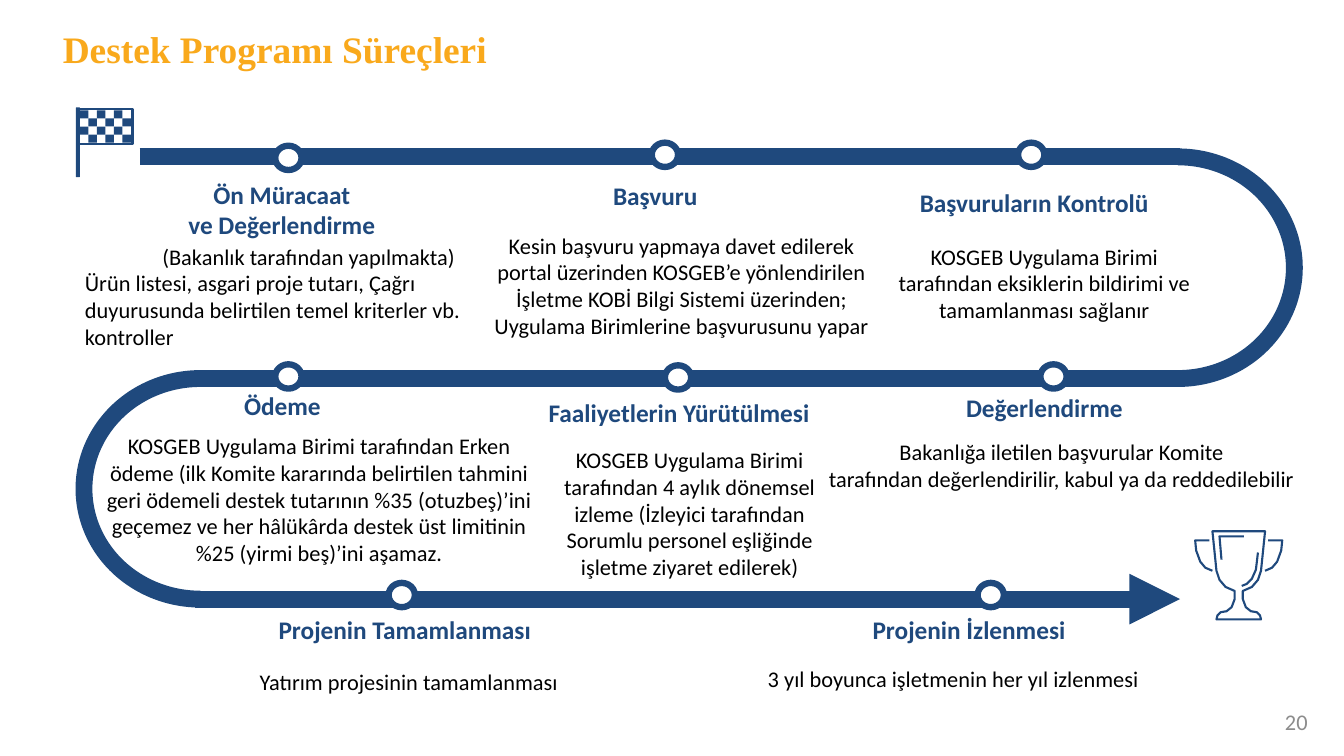
from dataclasses import dataclass
from itertools import product

from lxml import etree
from pptx import Presentation
from pptx.dml.color import RGBColor
from pptx.enum.shapes import MSO_CONNECTOR, MSO_SHAPE
from pptx.enum.text import MSO_ANCHOR, MSO_AUTO_SIZE, PP_ALIGN
from pptx.oxml.ns import qn
from pptx.shapes.autoshape import Shape
from pptx.slide import Slide
from pptx.text.text import _Paragraph as Paragraph
from pptx.util import Inches, Pt

STRAIGHT = MSO_CONNECTOR.STRAIGHT
ARC, OVAL = MSO_SHAPE.ARC, MSO_SHAPE.OVAL
RECTANGLE, ROUNDED = MSO_SHAPE.RECTANGLE, MSO_SHAPE.ROUNDED_RECTANGLE
LEFT, CENTER, RIGHT = PP_ALIGN.LEFT, PP_ALIGN.CENTER, PP_ALIGN.RIGHT
TOP, MIDDLE = MSO_ANCHOR.TOP, MSO_ANCHOR.MIDDLE
NO_AUTO_SIZE = MSO_AUTO_SIZE.NONE

COLORS = {"navy": "1F497D", "orange": "F9A91C", "black": "000000", "white": "FFFFFF", "gray": "8C8C8C"}
FORMATS = {
    "title": {"name": "Times New Roman", "size": Pt(26.6), "bold": True},
    "heading": {"name": "Calibri", "size": Pt(18), "bold": True},
    "body": {"name": "Calibri", "size": Pt(15.9), "bold": False},
}

SLIDE_WIDTH, SLIDE_HEIGHT = Inches(13.28), Inches(7.47)
COLUMN = SLIDE_WIDTH / 132.8
ROW = SLIDE_HEIGHT / 74.7

ROAD_ROWS = (15.5, 37.4, 59.2)
ROAD_STARTS = (13.8, 19.4, 19.3)
ROAD_END = 116.6
ROAD_WIDTH, DOT_LINE, ICON_LINE = 12, 4.5, 1.5
DOT_WIDTH, DOT_HEIGHT = 2.6, 2.4
CHECK_WIDTH, CHECK_HEIGHT = 0.84, 0.8
TROPHY_CENTER = 122.4

Points = list[tuple[float, float]]


@dataclass(frozen=True)
class Box:
    left: float
    top: float
    width: float
    height: float

    def emu(self) -> tuple[int, int, int, int]:
        return (round(self.left * COLUMN), round(self.top * ROW),
                round(self.width * COLUMN), round(self.height * ROW))


@dataclass(frozen=True)
class Stage:
    dot: tuple[float, float]
    heading: str
    heading_box: Box
    body: tuple[str, ...]
    body_box: Box
    last_alignment: PP_ALIGN = CENTER


@dataclass(frozen=True)
class Bend:
    box: Box
    start: float
    end: float


STAGES = (
    Stage((27.2, 14.4), "Ön Müracaat\nve Değerlendirme", Box(17.5, 17.2, 20.7, 7.1),
          ("(Bakanlık tarafından yapılmakta)",
           "Ürün listesi, asgari proje tutarı, Çağrı duyurusunda belirtilen temel kriterler vb. kontroller"),
          Box(7.4, 23.5, 46.2, 11.7), LEFT),
    Stage((64.4, 14.1), "Başvuru", Box(59.5, 17.3, 10.5, 4.1),
          ("Kesin başvuru yapmaya davet edilerek portal üzerinden KOSGEB’e yönlendirilen",
           "İşletme KOBİ Bilgi Sistemi üzerinden; Uygulama Birimlerine başvurusunu yapar"),
          Box(47.4, 22.4, 39.9, 11.7)),
    Stage((100.6, 14.1), "Başvuruların Kontrolü", Box(89.5, 18, 25.4, 4),
          ("KOSGEB Uygulama Birimi tarafından eksiklerin bildirimi ve tamamlanması sağlanır",),
          Box(86.2, 23.5, 34, 9.1)),
    Stage((102.8, 36), "Değerlendirme", Box(94.3, 38.3, 17.8, 4.1),
          ("Bakanlığa iletilen başvurular Komite",
           "tarafından değerlendirilir, kabul ya da reddedilebilir"),
          Box(80.9, 42.8, 48, 9.1)),
    Stage((65.7, 36.1), "Faaliyetlerin Yürütülmesi", Box(52.9, 38.8, 28.4, 4.1),
          ("KOSGEB Uygulama Birimi tarafından 4 aylık dönemsel izleme (İzleyici tarafından "
           "Sorumlu personel eşliğinde işletme ziyaret edilerek)",),
          Box(51.9, 43.6, 32.5, 14.4)),
    Stage((27.2, 36), "Ödeme", Box(22.8, 38.1, 10.2, 4.1),
          ("KOSGEB Uygulama Birimi tarafından Erken ödeme (ilk Komite kararında belirtilen tahmini",
           "geri ödemeli destek tutarının %35 (otuzbeş)’ini geçemez ve her hâlükârda destek üst limitinin",
           "%25 (yirmi beş)’ini aşamaz."),
          Box(9.3, 42.2, 44.5, 14.4)),
    Stage((38.4, 57.6), "Projenin Tamamlanması", Box(26.2, 60.2, 27.6, 4.1),
          ("Yatırım projesinin tamamlanması",), Box(20.4, 65.5, 40, 3.7)),
    Stage((96.6, 57.6), "Projenin İzlenmesi", Box(84, 60.2, 23.5, 4.1),
          ("3 yıl boyunca işletmenin her yıl izlenmesi",), Box(73.8, 65.2, 40.8, 3.7)),
)

BENDS = (
    Bend(Box(104.9, ROAD_ROWS[0], 23, ROAD_ROWS[1] - ROAD_ROWS[0]), 162, 54),
    Bend(Box(8.3, ROAD_ROWS[1], 23, ROAD_ROWS[2] - ROAD_ROWS[1]), 54, 162),
)

CUP_HALF: Points = [
    (0, 52.5), (2.6, 52.5), (2.2, 56.4), (1.9, 57.3), (1.3, 58), (0.4, 58.4), (0.4, 59.2),
    (0.7, 60), (1.2, 60.4), (1.8, 60.5), (2.1, 60.8), (2.2, 61.2), (0, 61.2),
]
HANDLE: Points = [(2.9, 53.4), (4.3, 53.4), (4.2, 54.4), (3.8, 55.5), (3.3, 56.1), (2.6, 56.4)]
RIM_GLINT: Points = [(0.5, 53), (-1.9, 53), (-1.7, 55.3)]
BOWL_GLINT: Points = [(1.9, 54.6), (1.7, 56.3), (1.3, 57.2), (0.8, 57.7), (0.3, 57.9)]


def color(name: str) -> RGBColor:
    return RGBColor.from_string(COLORS[name])


def write(paragraph: Paragraph, text: str, style: str, color_name: str, alignment: PP_ALIGN) -> None:
    paragraph.text = text
    paragraph.alignment = alignment
    for run in paragraph.runs:
        for attribute, value in FORMATS[style].items():
            setattr(run.font, attribute, value)
        run.font.color.rgb = color(color_name)


def add_text(slide: Slide, box: Box, lines: tuple[str, ...], style: str, color_name: str,
             wrap: bool = True, alignment: PP_ALIGN = CENTER, last_alignment: PP_ALIGN = CENTER) -> Shape:
    shape = slide.shapes.add_textbox(*box.emu())
    frame = shape.text_frame
    frame.word_wrap = wrap
    for index, line in enumerate(lines):
        paragraph = frame.add_paragraph() if index else frame.paragraphs[0]
        write(paragraph, line, style, color_name, last_alignment if index == len(lines) - 1 > 0 else alignment)
    return shape


def format_shape(shape: Shape, fill: str | None, line_width: float = 0) -> None:
    shape.shadow.inherit = False
    if fill:
        shape.fill.solid()
        shape.fill.fore_color.rgb = color(fill)
    else:
        shape.fill.background()
    if line_width:
        shape.line.color.rgb = color("navy")
        shape.line.width = Pt(line_width)
    else:
        shape.line.fill.background()


def add_shape(slide: Slide, kind: MSO_SHAPE, box: Box, fill: str | None, line_width: float = 0) -> Shape:
    shape = slide.shapes.add_shape(kind, *box.emu())
    format_shape(shape, fill, line_width)
    return shape


def add_road(slide: Slide, start: float, row: float, arrow: bool) -> None:
    y = round(row * ROW)
    connector = slide.shapes.add_connector(STRAIGHT, round(start * COLUMN), y, round(ROAD_END * COLUMN), y)
    connector.line.color.rgb = color("navy")
    connector.line.width = Pt(ROAD_WIDTH)
    properties = connector.element.spPr
    if arrow:
        etree.SubElement(properties.find(qn("a:ln")), qn("a:tailEnd"), type="triangle")
    etree.SubElement(properties, qn("a:effectLst"))


def add_bend(slide: Slide, bend: Bend) -> None:
    shape = add_shape(slide, ARC, bend.box, None, ROAD_WIDTH)
    shape.adjustments[0] = bend.start
    shape.adjustments[1] = bend.end


def mirrored(points: Points) -> Points:
    return [(-x, y) for x, y in points]


def add_stroke(slide: Slide, points: Points, close: bool = False) -> None:
    corners = [(round((TROPHY_CENTER + x) * COLUMN), round(y * ROW)) for x, y in points]
    builder = slide.shapes.build_freeform(*corners[0])
    builder.add_line_segments(corners[1:], close=close)
    format_shape(builder.convert_to_shape(), None, ICON_LINE)


def add_flag(slide: Slide) -> None:
    add_shape(slide, ROUNDED, Box(7.5, 10.6, 0.4, 6.9), "navy")
    add_shape(slide, RECTANGLE, Box(7.7, 10.8, 5.4, 3.4), None, ICON_LINE)
    for column, row in product(range(6), range(4)):
        if column % 2 == row % 2:
            add_shape(slide, RECTANGLE, Box(7.9 + column * CHECK_WIDTH, 10.9 + row * CHECK_HEIGHT,
                                            CHECK_WIDTH, CHECK_HEIGHT), "navy")


def add_trophy(slide: Slide) -> None:
    add_stroke(slide, CUP_HALF + mirrored(CUP_HALF[1:-1])[::-1], close=True)
    for points in (HANDLE, mirrored(HANDLE), RIM_GLINT, BOWL_GLINT):
        add_stroke(slide, points)


def add_title(slide: Slide) -> None:
    title = slide.shapes.title
    title.left, title.top, title.width, title.height = Box(6.2, 2.6, 86, 4.5).emu()
    frame = title.text_frame
    frame.margin_left = frame.margin_top = frame.margin_right = frame.margin_bottom = 0
    frame.vertical_anchor = TOP
    frame.auto_size = NO_AUTO_SIZE
    write(frame.paragraphs[0], "Destek Programı Süreçleri", "title", "orange", LEFT)


def add_stage(slide: Slide, stage: Stage) -> None:
    add_shape(slide, OVAL, Box(*stage.dot, DOT_WIDTH, DOT_HEIGHT), "white", DOT_LINE)
    add_text(slide, stage.heading_box, (stage.heading,), "heading", "navy", wrap=False)
    add_text(slide, stage.body_box, stage.body, "body", "black", last_alignment=stage.last_alignment)


def main() -> None:
    presentation = Presentation()
    presentation.slide_width, presentation.slide_height = SLIDE_WIDTH, SLIDE_HEIGHT
    slide = presentation.slides.add_slide(presentation.slide_layouts[5])
    add_title(slide)
    for bend in BENDS:
        add_bend(slide, bend)
    for start, row in zip(ROAD_STARTS, ROAD_ROWS):
        add_road(slide, start, row, arrow=row == ROAD_ROWS[-1])
    for stage in STAGES:
        add_stage(slide, stage)
    add_flag(slide)
    add_trophy(slide)
    number = add_text(slide, Box(99.2, 69.3, 31, 4), ("20",), "body", "gray", alignment=RIGHT)
    number.text_frame.vertical_anchor = MIDDLE
    presentation.save("out.pptx")


if __name__ == "__main__":
    main()
